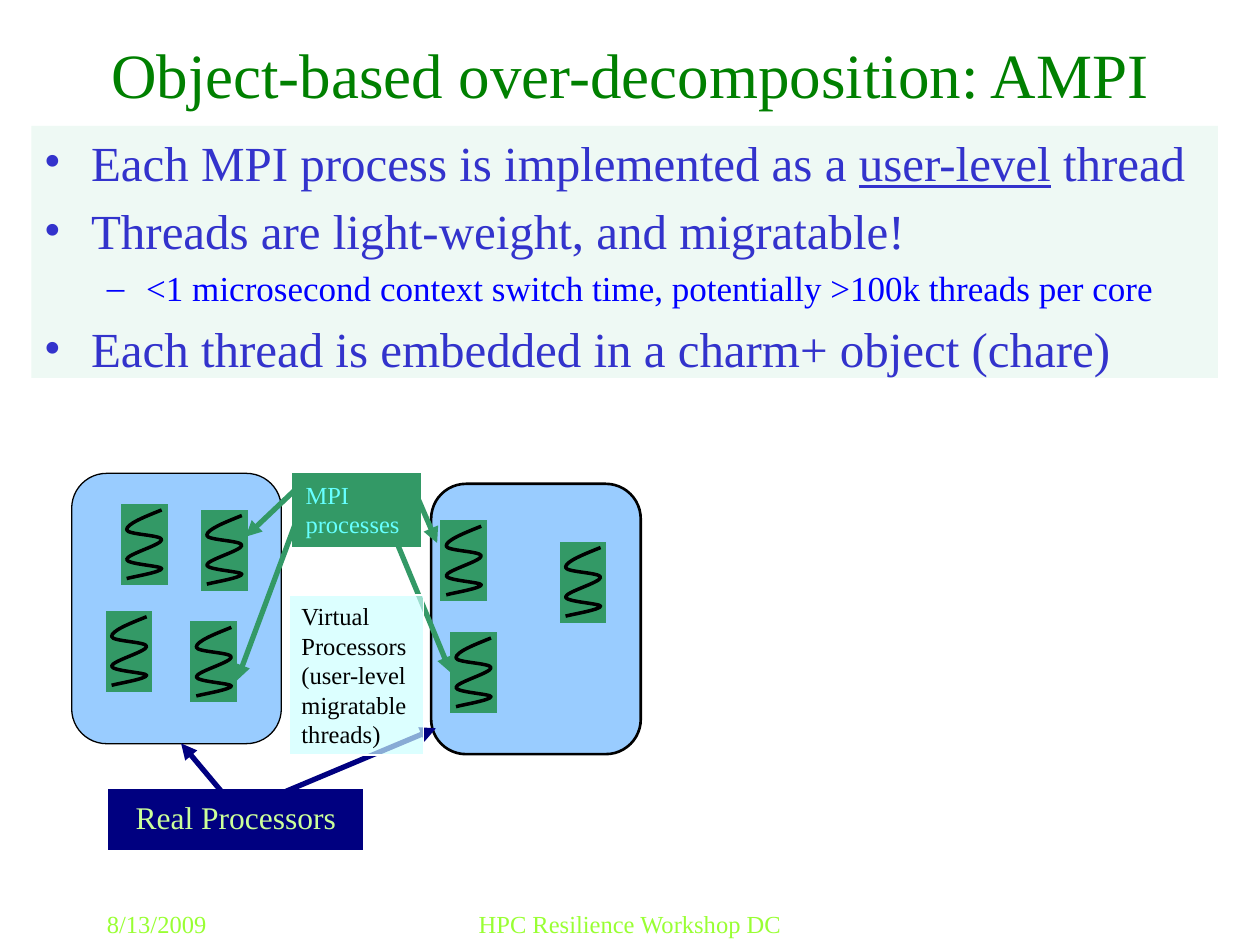
from lxml.etree import SubElement
from pptx import Presentation
from pptx.dml.color import RGBColor
from pptx.enum.shapes import MSO_CONNECTOR as Connector, MSO_SHAPE as Shape
from pptx.enum.text import MSO_ANCHOR as Anchor, PP_ALIGN as Align
from pptx.oxml.ns import qn
from pptx.util import Pt

FONT = "Times New Roman"
GREEN, NAVY, BLACK = "339966", "000080", "000000"
THREAD_SIZE = (26, 45.5)
THREAD_INSET = 3

# Squiggle: start point, then cubic segments (two controls and an end)
SQUIGGLE_START = (20, 0)
SQUIGGLE_CURVES = [
    ((10, 4), (0, 8), (0, 11.3)),
    ((0, 14.2), (20, 14.2), (20, 17)),
    ((20, 20), (0, 25.3), (0, 28.3)),
    ((0, 31), (20, 32), (20, 33.5)),
    ((20, 35.5), (3.4, 38.2), (0, 39.2)),
]

# Bullet levels: character, text indent, hanging indent, size, space before, colour
LEVELS = [("•", 27, 27, 28, 5.6, "3333CC"), ("–", 58.5, 22.5, 20, 4, "0000FF")]
BULLETS = [
    (0, ["Each MPI process is implemented as a ", "user-level", " thread"]),
    (0, ["Threads are light-weight, and migratable!"]),
    (1, ["<1 microsecond context switch time, potentially >100k threads per core"]),
    (0, ["Each thread is embedded in a charm+ object (chare)"]),
]


def color(value):
    return RGBColor.from_string(value)


def set_values(target, values):
    for name, value in values.items():
        setattr(target, name, value)


def add_span(para, text, size, font_color, **values):
    span = para.add_run()
    span.text = text
    span.font.color.rgb = color(font_color)
    set_values(span.font, {"name": FONT, "size": Pt(size), **values})


def write(box, text, size, font_color, align=Align.LEFT, anchor=Anchor.TOP):
    set_values(box.text_frame, {"word_wrap": True, "vertical_anchor": anchor})
    para = box.text_frame.paragraphs[0]
    para.alignment = align
    add_span(para, text, size, font_color)


def add_text(page, area, *content):
    write(page.shapes.add_textbox(*map(Pt, area)), *content)


def add_panel(page, area, fill, line=None, width=0.75, kind=Shape.RECTANGLE, alpha=None):
    panel = page.shapes.add_shape(kind, *map(Pt, area))
    panel.shadow.inherit = False
    panel.fill.solid()
    panel.fill.fore_color.rgb = color(fill)
    if alpha:
        tint = panel.fill._xPr.find(".//" + qn("a:srgbClr"))
        SubElement(tint, qn("a:alpha"), val=str(alpha * 1000))
    if line:
        panel.line.color.rgb = color(line)
        panel.line.width = Pt(width)
        SubElement(panel.line._get_or_add_ln(), qn("a:miter"), lim="800000")
    else:
        panel.line.fill.background()
    return panel


def add_bullets(box):
    frame = box.text_frame
    set_values(frame, {"word_wrap": True, "vertical_anchor": Anchor.TOP})
    for index, (level, parts) in enumerate(BULLETS):
        mark, indent, hanging, size, before, font_color = LEVELS[level]
        para = frame.paragraphs[0] if index == 0 else frame.add_paragraph()
        set_values(para, {"level": level, "alignment": Align.LEFT, "space_before": Pt(before)})
        props = para._p.get_or_add_pPr()
        props.set("marL", str(Pt(indent)))
        props.set("indent", str(-Pt(hanging)))
        SubElement(props, qn("a:buFont"), typeface=FONT)
        SubElement(props, qn("a:buChar"), char=mark)
        for part in parts:
            values = {"underline": True} if part == "user-level" else {}
            add_span(para, part, size, font_color, **values)


def add_arrow(page, start, end, line_color):
    arrow = page.shapes.add_connector(Connector.STRAIGHT, *map(Pt, start + end))
    arrow.line.color.rgb = color(line_color)
    arrow.line.width = Pt(3)
    SubElement(arrow.line._get_or_add_ln(), qn("a:tailEnd"), type="triangle")
    SubElement(arrow._element.spPr, qn("a:effectLst"))
    return arrow


def curve_segments(freeform):
    """Turn each three straight segments into one cubic curve."""
    lines = list(freeform._element.iter(qn("a:lnTo")))
    for first in range(0, len(lines), 3):
        outline = lines[first].getparent()
        curve = SubElement(outline, qn("a:cubicBezTo"))
        for line in lines[first:first + 3]:
            curve.append(line[0])
            outline.remove(line)


def add_thread(page, left, top):
    panel = add_panel(page, (left, top, *THREAD_SIZE), GREEN, GREEN)
    x, y = left + THREAD_INSET, top + THREAD_INSET
    builder = page.shapes.build_freeform(Pt(x + SQUIGGLE_START[0]), Pt(y + SQUIGGLE_START[1]))
    points = [(Pt(x + dx), Pt(y + dy)) for curve in SQUIGGLE_CURVES for dx, dy in curve]
    builder.add_line_segments(points, close=False)
    squiggle = builder.convert_to_shape()
    curve_segments(squiggle)
    squiggle.shadow.inherit = False
    squiggle.fill.background()
    squiggle.line.color.rgb = color(BLACK)
    squiggle.line.width = Pt(2)
    return panel


def main():
    deck = Presentation()
    set_values(deck, {"slide_width": Pt(720), "slide_height": Pt(540)})
    page = deck.slides.add_slide(deck.slide_layouts[6])

    # Title, bullets and footer
    add_text(page, (24, 18, 672, 48), "Object-based over-decomposition: AMPI", 36, "008000",
             Align.CENTER, Anchor.MIDDLE)
    add_bullets(add_panel(page, (18, 72, 678, 144), "EEF9F4"))
    add_text(page, (54, 516, 150, 24), "8/13/2009", 14, "99FF33")
    add_text(page, (246, 516, 228, 24), "HPC Resilience Workshop DC", 14, "99FF33", Align.CENTER)

    # Real processors
    for left, top, width in [(246.4, 276.5, 1.5), (41, 270.5, 0.75)]:
        add_panel(page, (left, top, 119.8, 154.5), "99CCFF", BLACK, width, Shape.ROUNDED_RECTANGLE)
    label = add_panel(page, (63.4, 452.2, 142.8, 31.9), NAVY, NAVY, 3)
    write(label, "Real Processors", 18, "CCFF99", Align.CENTER)
    for start, end in [((126.5, 452.2), (103.5, 424.8)), ((163.4, 452.2), (249.1, 416.2))]:
        add_arrow(page, start, end, NAVY)

    # MPI processes, each a user-level thread
    label = add_panel(page, (167.5, 270.7, 72.7, 41.6), GREEN, GREEN)
    write(label, "MPI processes", 14, "66FFFF")
    spots = [(69.4, 288.4), (115.2, 291.6), (109.2, 355.5), (60.8, 349.4),
             (320.2, 309.9), (252, 297.7), (257.6, 361.6)]
    threads = [add_thread(page, left, top) for left, top in spots]
    for start, end in [((169.2, 279.4), (140.4, 306.7)), ((169.2, 298.1), (135.4, 388.8)),
                       ((234, 273.6), (249.8, 310.3))]:
        add_arrow(page, start, end, GREEN)
    add_arrow(page, (227.5, 311.8), (257.6, 384.4), GREEN).end_connect(threads[-1], 1)

    # Translucent note on top
    note = add_panel(page, (165.2, 340.1, 77, 91.4), "CCFFFF", "FFFFFF", alpha=67)
    write(note, "Virtual Processors (user-level migratable threads)", 14, BLACK)

    deck.save("out.pptx")


if __name__ == "__main__":
    main()
